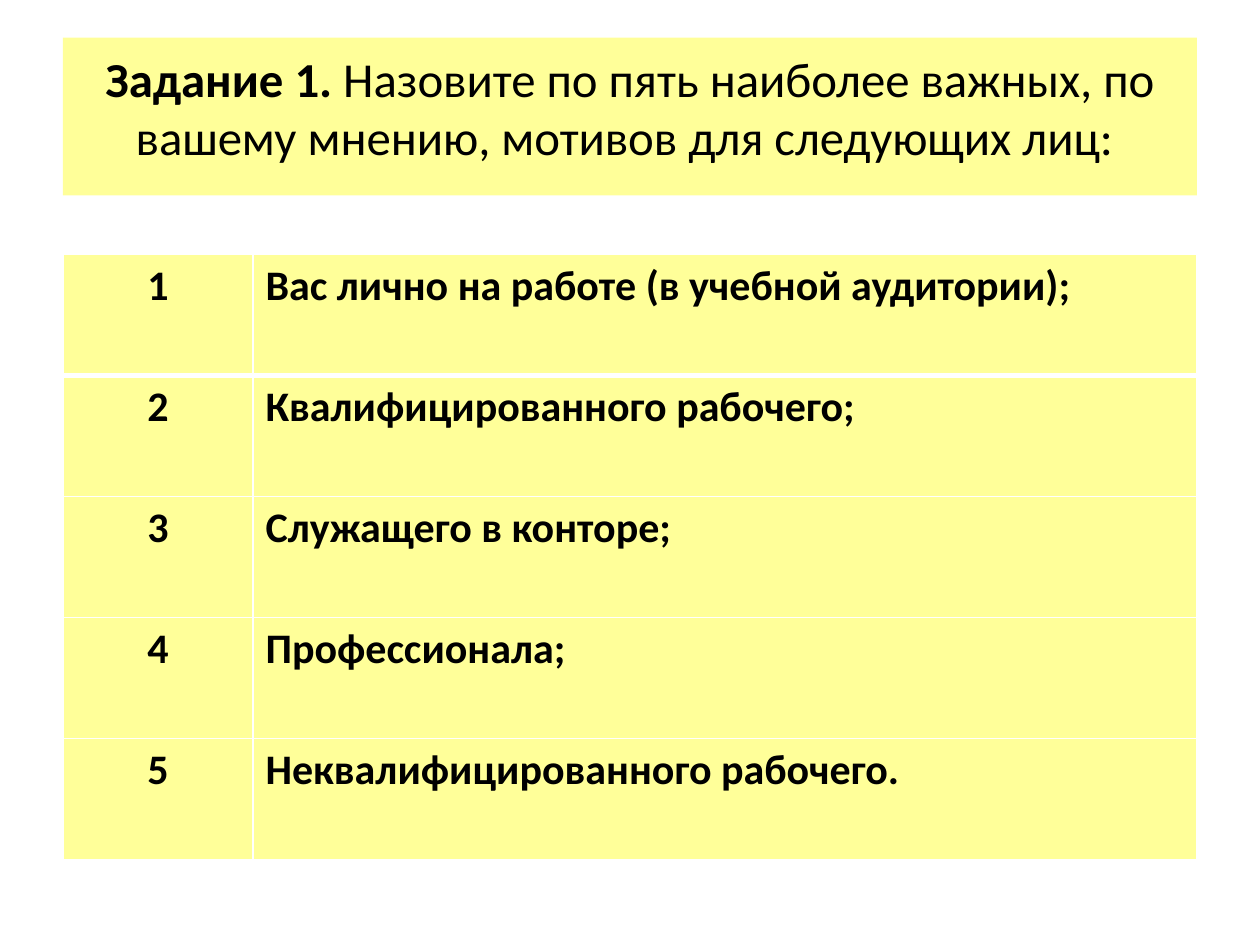
from lxml import etree
from pptx import Presentation
from pptx import util as u
from pptx.dml.color import RGBColor
from pptx.enum import shapes, text
from pptx.oxml import ns

YELLOW, WHITE, BLACK = "FFFF99", "FFFFFF", "000000"
LEFT, WIDTH = u.Cm(1.27), u.Cm(22.86)
NUMBER_WIDTH = u.Cm(3.83)
ROW_HEIGHT = u.Cm(2.44)
PERSONS = [
    "Вас лично на работе (в учебной аудитории); ",
    "Квалифицированного рабочего; ",
    "Служащего в конторе; ",
    "Профессионала; ",
    "Неквалифицированного рабочего. ",
]


def rgb(value):
    return RGBColor.from_string(value)


def set_fill(target, color):
    target.fill.solid()
    target.fill.fore_color.rgb = rgb(color)


def set_attrs(obj, values):
    for name, value in values.items():
        setattr(obj, name, value)


def add_run(p, content, size, bold):
    r = p.add_run()
    r.text = content
    set_attrs(r.font, {"name": "Calibri", "size": u.Pt(size), "bold": bold})
    r.font.color.rgb = rgb(BLACK)


def add_title(s):
    sp = s.shapes.add_shape(shapes.MSO_SHAPE.RECTANGLE, LEFT, u.Cm(0.76), WIDTH, u.Cm(3.18))
    sp.shadow.inherit = False
    sp.line.fill.background()
    set_fill(sp, YELLOW)
    tf = sp.text_frame
    set_attrs(tf, {"word_wrap": True, "vertical_anchor": text.MSO_ANCHOR.TOP,
                   "margin_top": u.Cm(0.22)})
    p = tf.paragraphs[0]
    p.alignment = text.PP_ALIGN.CENTER
    add_run(p, "Задание 1. ", 27.9, True)
    add_run(p, "Назовите по пять наиболее важных, по вашему мнению, "
               "мотивов для следующих лиц: ", 27.9, False)


def set_borders(cell, color, widths):
    """Draw cell borders; widths maps L, R, T, B to points."""
    tc_pr = cell._tc.get_or_add_tcPr()
    for side, width in widths.items():
        ln = etree.SubElement(tc_pr, ns.qn(f"a:ln{side}"), w=str(u.Pt(width)))
        fill = etree.SubElement(ln, ns.qn("a:solidFill"))
        etree.SubElement(fill, ns.qn("a:srgbClr"), val=color)


def fill_cell(cell, content, align, widths):
    set_borders(cell, WHITE, widths)
    set_fill(cell, YELLOW)
    p = cell.text_frame.paragraphs[0]
    p.alignment = align
    add_run(p, content, 24, True)


def add_persons_table(s):
    table = s.shapes.add_table(len(PERSONS), 2, LEFT, u.Cm(5.13), WIDTH,
                               ROW_HEIGHT * len(PERSONS)).table
    table.columns[0].width = NUMBER_WIDTH
    table.columns[1].width = WIDTH - NUMBER_WIDTH
    for i, person in enumerate(PERSONS):
        table.rows[i].height = ROW_HEIGHT
        widths = {"L": 1, "R": 1, "T": 3 if i == 1 else 1, "B": 3 if i == 0 else 1}
        fill_cell(table.cell(i, 0), str(i + 1), text.PP_ALIGN.CENTER, widths)
        fill_cell(table.cell(i, 1), person, text.PP_ALIGN.JUSTIFY, widths)


def main():
    prs = Presentation()
    set_attrs(prs, {"slide_width": u.Cm(25.4), "slide_height": u.Cm(19.05)})
    s = prs.slides.add_slide(prs.slide_layouts[6])
    add_title(s)
    add_persons_table(s)
    prs.save("out.pptx")


if __name__ == "__main__":
    main()
